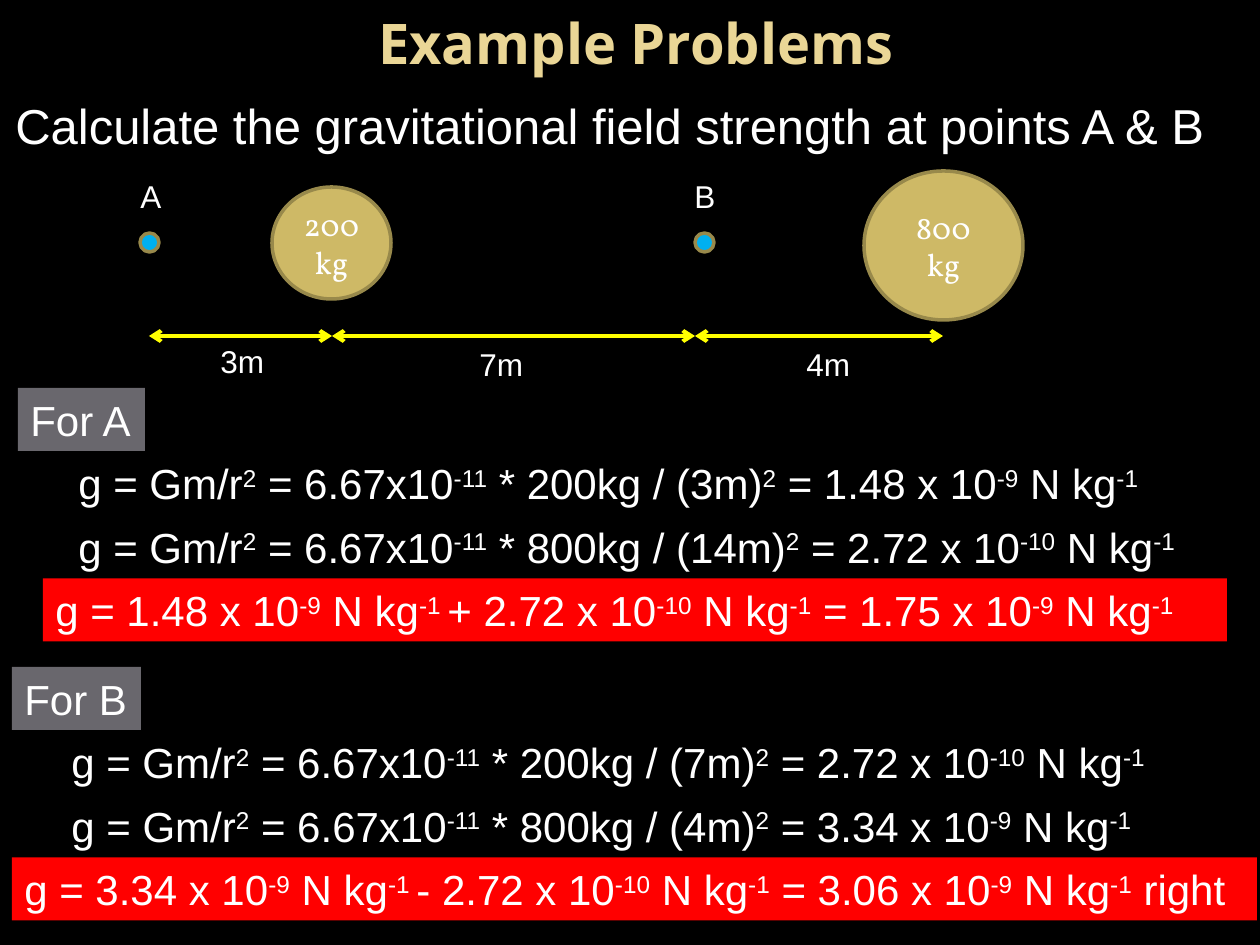
"""Build the gravitational field strength example slide."""
from lxml import etree
from pptx import Presentation
from pptx.dml.color import RGBColor
from pptx.enum.shapes import MSO_CONNECTOR, MSO_SHAPE
from pptx.enum.text import MSO_ANCHOR, MSO_AUTO_SIZE, PP_ALIGN
from pptx.oxml.ns import qn
from pptx.util import Pt

EMU_PER_PX = 914400 / 126
OVAL, STRAIGHT = MSO_SHAPE.OVAL, MSO_CONNECTOR.STRAIGHT
CENTER, LEFT, MIDDLE, TOP = PP_ALIGN.CENTER, PP_ALIGN.LEFT, MSO_ANCHOR.MIDDLE, MSO_ANCHOR.TOP
GROW, FIXED = MSO_AUTO_SIZE.SHAPE_TO_FIT_TEXT, MSO_AUTO_SIZE.NONE

BLACK = RGBColor(0x00, 0x00, 0x00)
WHITE = RGBColor(0xFF, 0xFF, 0xFF)
CREAM = RGBColor(0xEA, 0xD6, 0x96)
GOLD = RGBColor(0xCE, 0xB9, 0x66)
BRONZE = RGBColor(0x98, 0x89, 0x4B)
BLUE = RGBColor(0x00, 0xB0, 0xF0)
YELLOW = RGBColor(0xFF, 0xFF, 0x00)
GREY = RGBColor(0x69, 0x67, 0x6D)
RED = RGBColor(0xFF, 0x00, 0x00)


def px(*lengths):
    return [round(length * EMU_PER_PX) for length in lengths]


def write(frame, text, size=24, font="Arial", color=WHITE, bold=False,
          align=LEFT, anchor=TOP, wrap=False):
    """Fill a text frame; parts between carets are superscript."""
    frame.word_wrap = wrap
    frame.auto_size = FIXED if wrap else GROW
    frame.vertical_anchor = anchor
    para = frame.paragraphs[0]
    para.alignment = align
    for index, part in enumerate(text.split("^")):
        if not part:
            continue
        span = para.add_run()
        span.text = part
        span.font.size = Pt(size)
        span.font.name = font
        span.font.bold = bold
        span.font.color.rgb = color
        if index % 2:
            span.font._element.set("baseline", "30000")


class Slide:
    """Hold the current page and draw its elements in one style."""

    def __init__(self, deck):
        self.page = deck.slides.add_slide(deck.slide_layouts[6])
        self.page.background.fill.solid()
        self.page.background.fill.fore_color.rgb = BLACK

    def text(self, left, top, width, height, text, fill=None, **style):
        box = self.page.shapes.add_textbox(*px(left, top, width, height))
        if fill is not None:
            box.fill.solid()
            box.fill.fore_color.rgb = fill
        write(box.text_frame, text, **style)

    def ball(self, left, top, width, height, fill, text=""):
        ball = self.page.shapes.add_shape(OVAL, *px(left, top, width, height))
        ball.shadow.inherit = False
        ball.fill.solid()
        ball.fill.fore_color.rgb = fill
        ball.line.color.rgb = BRONZE
        ball.line.width = Pt(2)
        if text:
            write(ball.text_frame, text, size=18, font="Vollkorn",
                  align=CENTER, anchor=MIDDLE, wrap=True)

    def distance(self, start, end, y):
        arrow = self.page.shapes.add_connector(STRAIGHT, *px(start, y, end, y))
        arrow.line.color.rgb = YELLOW
        arrow.line.width = Pt(2.25)
        line = arrow.line._get_or_add_ln()
        for tag in ("a:headEnd", "a:tailEnd"):
            etree.SubElement(line, qn(tag), type="arrow")
        etree.SubElement(arrow._element.spPr, qn("a:effectLst"))


def main():
    deck = Presentation()
    deck.slide_width, deck.slide_height = px(1260, 945)
    slide = Slide(deck)

    slide.text(69, -37, 1134, 158, "Example Problems", size=32, font="Noto Sans",
               color=CREAM, bold=True, align=CENTER, anchor=MIDDLE, wrap=True)
    slide.text(3, 89, 1228, 72,
               "Calculate the gravitational field strength at points A & B", size=28)

    slide.ball(272, 187, 119, 112, GOLD, "200 kg")
    slide.ball(864, 171, 159, 149, GOLD, "800 kg")
    for name, dot_left, label_left in (("A", 140, 128), ("B", 695, 682)):
        slide.ball(dot_left, 233, 19, 19, BLUE)
        slide.text(label_left, 171, 47, 51, name, size=18)

    stops = (149, 332, 695, 943)
    labels = (("3m", 208, 336), ("7m", 467, 339), ("4m", 794, 339))
    for start, end, (label, left, top) in zip(stops, stops[1:], labels):
        slide.distance(start, end, 336)
        slide.text(left, top, 69, 51, label, size=18)

    formula = "g = Gm/r^2^ = 6.67x10^-11^ * {}kg / ({}m)^2^ = {}^ N kg^-1"
    formula = formula.replace("{}^ N", "{} N")
    parts = (
        ("For A", 388, 18, 127, 66,
         ((200, 3, "1.48 x 10^-9^", 1148), (800, 14, "2.72 x 10^-10^", 1162)),
         "g = 1.48 x 10^-9^ N kg^-1 ^+ 2.72 x 10^-10^ N kg^-1^ = 1.75 x 10^-9^ N kg^-1",
         43, 1184),
        ("For B", 667, 12, 129, 59,
         ((200, 7, "2.72 x 10^-10^", 1148), (800, 4, "3.34 x 10^-9^", 1138)),
         "g = 3.34 x 10^-9^ N kg^-1 ^- 2.72 x 10^-10^ N kg^-1^ = 3.06 x 10^-9^ N kg^-1^ right",
         12, 1245),
    )
    row, height = 63.5, 63
    for name, top, left, width, indent, terms, total, total_left, total_width in parts:
        slide.text(left, top, width, height, name, fill=GREY)
        for index, (mass, radius, field, term_width) in enumerate(terms, 1):
            slide.text(indent, top + index * row, term_width, height,
                       formula.format(mass, radius, field))
        slide.text(total_left, top + 3 * row, total_width, height, total, fill=RED)

    deck.save("out.pptx")


if __name__ == "__main__":
    main()
